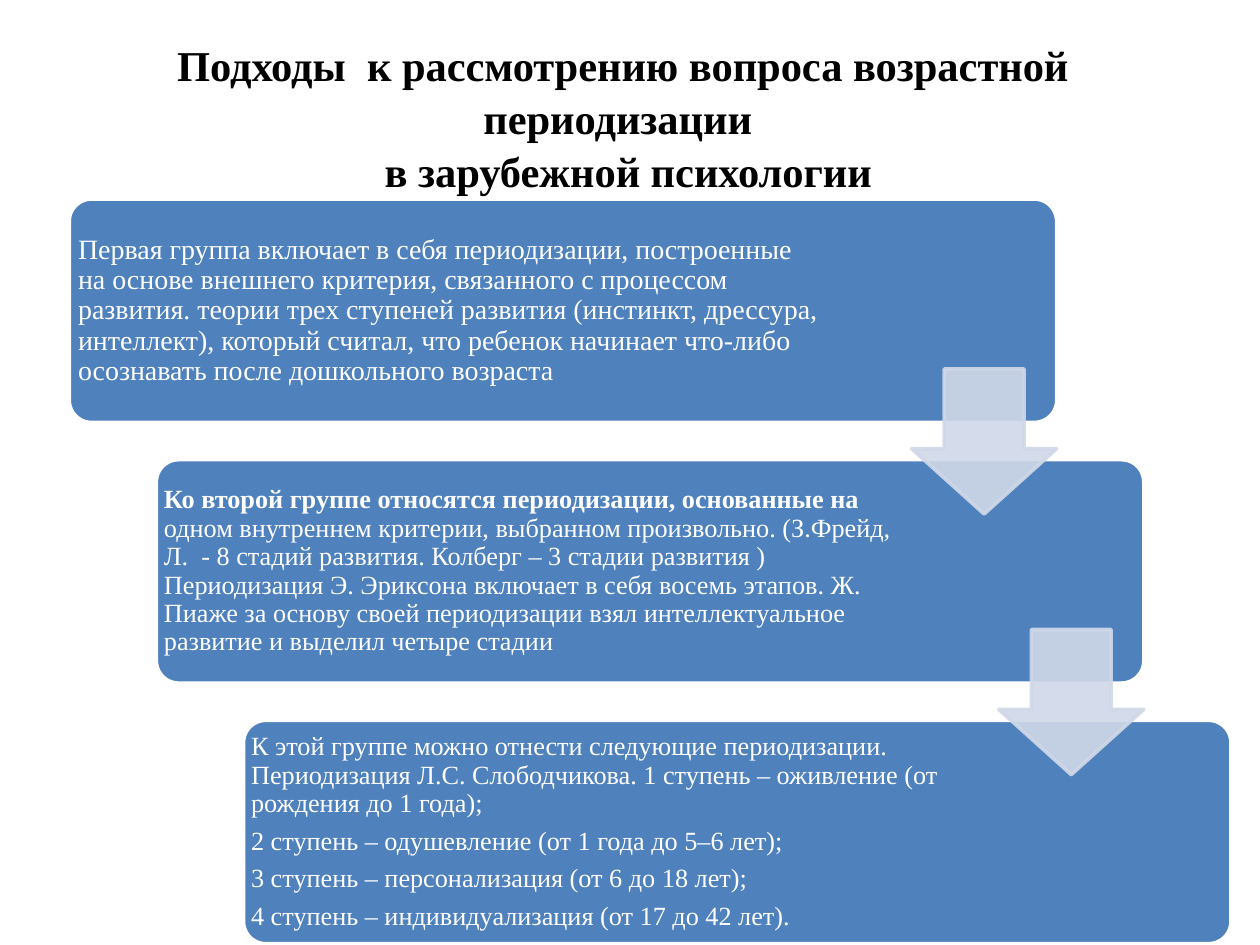
import dataclasses

import lxml.etree
import pptx
import pptx.dml.color
import pptx.enum.shapes
import pptx.enum.text
import pptx.oxml.ns
import pptx.util


@dataclasses.dataclass(frozen=True)
class Theme:
    """Colours, font and type sizes of the slide."""
    font: str = "Times New Roman"
    ink: str = "000000"
    paper: str = "FFFFFF"
    card: str = "4F81BD"
    arrow: str = "D0D8E8"
    arrow_alpha: int = 90
    title_size: float = 24.3
    lead_size: float = 16
    body_size: float = 15


@dataclasses.dataclass(frozen=True)
class Box:
    """A rectangle in inches."""
    left: float
    top: float
    width: float
    height: float

    def share(self, left, top, width, height):
        """Return the box lying at the given shares of this one."""
        return Box(self.left + left * self.width, self.top + top * self.height,
                   width * self.width, height * self.height)

    def place(self):
        """Return left, top, width and height as lengths."""
        return [pptx.util.Inches(value) for value in dataclasses.astuple(self)]


THEME = Theme()
ALIGN = pptx.enum.text.PP_ALIGN
ANCHOR = pptx.enum.text.MSO_ANCHOR
SHAPE = pptx.enum.shapes.MSO_SHAPE

TITLE = ("Подходы  к рассмотрению вопроса возрастной периодизации "
         "\v в зарубежной психологии")
GROUPS = [
    (THEME.lead_size, 0.07, 6.03, [[
        ("Первая группа включает в себя периодизации, построенные на основе "
         "внешнего критерия, связанного с процессом развития. теории трех "
         "ступеней развития (инстинкт, дрессура, интеллект), который считал, "
         "что ребенок начинает что-либо осознавать после дошкольного возраста",
         False)]]),
    (THEME.body_size, 0.06, 5.99, [[
        ("Ко второй группе относятся периодизации, основанные на ", True),
        ("одном внутреннем критерии, выбранном произвольно. (З.Фрейд, "
         "Л.  - 8 стадий развития. Колберг – 3 стадии развития ) "
         "Периодизация Э. Эриксона включает в себя восемь этапов. "
         "Ж. Пиаже за основу своей периодизации взял интеллектуальное "
         "развитие и выделил четыре стадии", False)]]),
    (THEME.body_size, 0.06, 5.99, [
        [("К этой группе можно отнести следующие периодизации. Периодизация "
          "Л.С. Слободчикова. 1 ступень – оживление (от рождения до 1 года);",
          False)],
        [("2 ступень – одушевление (от 1 года до 5–6 лет);", False)],
        [("3 ступень – персонализация (от 6 до 18 лет);", False)],
        [("4 ступень – индивидуализация (от 17 до 42 лет).", False)]]),
]


def colour(value):
    """Return the colour object of a hex value."""
    return pptx.dml.color.RGBColor.from_string(value)


def write_text(frame, paragraphs, size, ink, align=ALIGN.LEFT,
               anchor=ANCHOR.MIDDLE, insets=(0.1, 0.05, 0.1, 0.05),
               leading=0.9, after=0.0):
    """Fill a text frame with paragraphs of (text, bold) pairs."""
    frame.word_wrap = True
    frame.auto_size = pptx.enum.text.MSO_AUTO_SIZE.NONE
    frame.vertical_anchor = anchor
    (frame.margin_left, frame.margin_top, frame.margin_right,
     frame.margin_bottom) = [pptx.util.Inches(inset) for inset in insets]
    for index, pieces in enumerate(paragraphs):
        para = frame.add_paragraph() if index else frame.paragraphs[0]
        para.alignment = align
        para.line_spacing = leading
        para.space_before = pptx.util.Pt(0)
        para.space_after = pptx.util.Pt(after)
        for text, bold in pieces:
            for number, line in enumerate(text.split("\v")):
                if number:
                    para.add_line_break()
                span = para.add_run()
                span.text = line
                span.font.name = THEME.font
                span.font.size = pptx.util.Pt(size)
                span.font.bold = bold
                span.font.color.rgb = colour(ink)


def add_figure(page, kind, box, fill, line, adjustments, alpha=100):
    """Add a filled and outlined preset shape."""
    figure = page.shapes.add_shape(kind, *box.place())
    figure.shadow.inherit = False
    for index, value in enumerate(adjustments):
        figure.adjustments[index] = value
    figure.fill.solid()
    figure.fill.fore_color.rgb = colour(fill)
    figure.line.color.rgb = colour(line)
    figure.line.width = pptx.util.Pt(2)
    if alpha < 100:
        tag = pptx.oxml.ns.qn("a:srgbClr")
        for node in figure.element.spPr.iter(tag):
            lxml.etree.SubElement(node, pptx.oxml.ns.qn("a:alpha"),
                                  val=str(alpha * 1000))


def add_title(page, box):
    """Place the slide heading in the title placeholder."""
    title = page.shapes.title
    title.left, title.top, title.width, title.height = box.place()
    write_text(title.text_frame, [[(TITLE, True)]], THEME.title_size,
               THEME.ink, align=ALIGN.CENTER, anchor=ANCHOR.TOP,
               insets=(0.1, 0.06, 0.1, 0.05), leading=1.04)


def add_card(page, box, size, inset, text_width, paragraphs):
    """Draw one rounded card with its text on the left."""
    add_figure(page, SHAPE.ROUNDED_RECTANGLE, box, THEME.card, THEME.paper,
               [0.1])
    text_box = page.shapes.add_textbox(
        *box.share(0, 0, text_width / box.width, 1).place())
    write_text(text_box.text_frame, paragraphs, size, THEME.paper,
               insets=(inset,) * 4, after=size * 0.35)


def add_staircase(page, box):
    """Draw the cards stepping down and the arrows that link them."""
    cards = [box.share(0.075 * step, 0.35 * step, 0.85, 0.3)
             for step in range(len(GROUPS))]
    for card, group in zip(cards, GROUPS):
        add_card(page, card, *group)
    for card in cards[:-1]:
        side = 0.65 * card.height
        arrow = Box(card.left + card.width - side,
                    card.top + 0.76 * card.height, side, side)
        add_figure(page, SHAPE.DOWN_ARROW, arrow, THEME.arrow, THEME.arrow,
                   [0.55, 0.45], THEME.arrow_alpha)


def main():
    """Build the deck and save it."""
    deck = pptx.Presentation()
    deck.slide_width = pptx.util.Inches(10)
    deck.slide_height = pptx.util.Inches(7.5)
    page = deck.slides.add_slide(deck.slide_layouts.get_by_name("Title Only"))
    add_title(page, Box(0.86, 0.23, 8.17, 1.09))
    add_staircase(page, Box(0.55, 1.58, 9.22, 5.91))
    deck.save("out.pptx")


if __name__ == "__main__":
    main()
